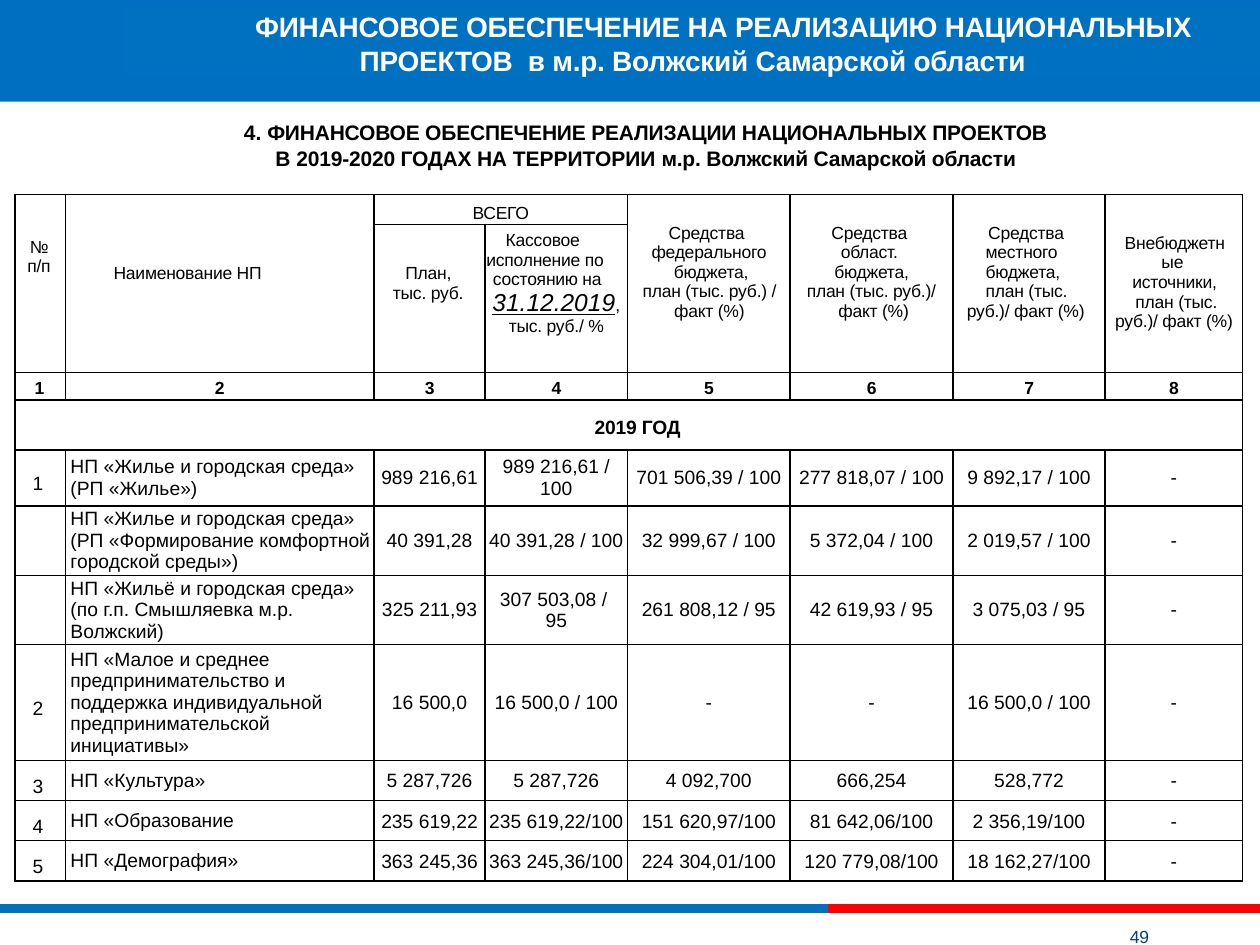
from dataclasses import dataclass
from typing import Optional

from lxml.etree import SubElement as Sub
from pptx import Presentation as Deck
from pptx.dml.color import RGBColor as RGB
from pptx.enum.shapes import MSO_CONNECTOR as Link, MSO_SHAPE as Form
from pptx.enum.text import MSO_ANCHOR as Anchor, PP_ALIGN as Align
from pptx.oxml.ns import qn
from pptx.util import Cm, Pt

HUES = {"blue": "0070C1", "band": "006FC1", "red": "FF0000", "navy": "073D86",
        "white": "FFFFFF", "black": "000000"}
FACE = "Arial"
WIDE, HIGH = 25.4, 19.05


@dataclass
class Run:
    text: str
    size: float = 10
    bold: bool = False
    slant: bool = False
    line: bool = False
    hue: str = "black"
    gap: int = 0


@dataclass
class Par:
    runs: list[Run]
    side: Align = Align.CENTER
    left: float = 0
    first: float = 0
    right: float = 0
    lead: Optional[float] = None
    above: float = 0


@dataclass
class Cell:
    row: int
    col: int
    pars: list[Par]
    top: float = 0
    mid: bool = False
    down: int = 1
    over: int = 1


@dataclass
class Rule:
    start: float
    end: float
    hue: str


def tint(name: str) -> RGB:
    return RGB.from_string(HUES[name])


def fill_text(frame, pars: list[Par]) -> None:
    for i, par in enumerate(pars):
        p = frame.paragraphs[0] if i == 0 else frame.add_paragraph()
        p.alignment = par.side
        if par.lead:
            p.line_spacing = par.lead
        if par.above:
            p.space_before = Pt(par.above)
        props = p._p.get_or_add_pPr()
        for key, size in (("marL", par.left), ("indent", par.first), ("marR", par.right)):
            props.set(key, str(Cm(size)))
        for run in par.runs:
            r = p.add_run()
            r.text = run.text
            font = r.font
            font.name, font.size = FACE, Pt(run.size)
            font.bold, font.italic, font.underline = run.bold, run.slant, run.line
            font.color.rgb = tint(run.hue)
            if run.gap:
                r._r.get_or_add_rPr().set("spc", str(run.gap))


def add_box(slide, left: float, top: float, wide: float, high: float,
            pars: list[Par], anchor=Anchor.TOP, hue: str = "") -> None:
    box = slide.shapes.add_textbox(Cm(left), Cm(top), Cm(wide), Cm(high))
    if hue:
        box.fill.solid()
        box.fill.fore_color.rgb = tint(hue)
    frame = box.text_frame
    frame.word_wrap = True
    frame.vertical_anchor = anchor
    frame.margin_left = frame.margin_right = frame.margin_bottom = 0
    frame.margin_top = Cm(0.03)
    fill_text(frame, pars)


def add_rule(slide, rule: Rule) -> None:
    line = slide.shapes.add_connector(
        Link.STRAIGHT, Cm(rule.start), Cm(18.32), Cm(rule.end), Cm(18.32))
    line.line.color.rgb = tint(rule.hue)
    line.line.width = Pt(5)
    Sub(line._element.spPr, qn("a:effectLst"))


def style_cell(cell) -> None:
    cell.margin_left = cell.margin_right = cell.margin_top = cell.margin_bottom = 0
    props = cell._tc.get_or_add_tcPr()
    for side in ("a:lnL", "a:lnR", "a:lnT", "a:lnB"):
        edge = Sub(props, qn(side), w=str(Pt(1)))
        Sub(Sub(edge, qn("a:solidFill")), qn("a:srgbClr"), val=HUES["black"])
    cell.fill.solid()
    cell.fill.fore_color.rgb = tint("white")


def put_cell(grid, item: Cell) -> None:
    cell = grid.cell(item.row, item.col)
    if item.down * item.over > 1:
        cell.merge(grid.cell(item.row + item.down - 1, item.col + item.over - 1))
    cell.margin_top = Cm(item.top)
    cell.vertical_anchor = Anchor.MIDDLE if item.mid else Anchor.TOP
    fill_text(cell.text_frame, item.pars)


def head(text: str, *rest, **spot) -> Par:
    return Par([Run(text, gap=-10), *rest], **spot)


LEFT, FULL = Align.LEFT, Align.JUSTIFY
HEADS = [
    Cell(0, 0, [head("№", side=LEFT, left=0.3), head("п/п", side=LEFT, left=0.25)], 0.87, down=2),
    Cell(0, 1, [head("Наименование НП", side=LEFT, left=0.97)], 1.39, down=2),
    Cell(0, 2, [head("ВСЕГО")], 0.18, over=2),
    Cell(0, 4, [head("Средства  федерального  бюджета,", left=0.46, right=0.46),
                head("план (тыс. руб.) / факт (%)", left=0.3, right=0.28)], 0.58, down=2),
    Cell(0, 5, [head("Средства  област.  бюджета,", left=0.74, right=0.74),
                head("план (тыс. руб.)/  факт (%)", left=0.33, right=0.25)], 0.58, down=2),
    Cell(0, 6, [head("Средства  местного  бюджета,  план (тыс.", side=FULL,
                     left=0.66, first=0.05, right=0.66),
                head("руб.)/ факт (%)", side=FULL, left=0.28)], 0.58, down=2),
    Cell(0, 7, [head("Внебюджетные  источники,", left=0.33, right=0.3),
                head("план (тыс.", left=0.1), head("руб.)/ факт (%)")], 0.79, down=2),
    Cell(1, 2, [head("План,  тыс. руб.", side=LEFT, left=0.38, first=0.25, right=0.38)], 0.8),
    Cell(1, 3, [head("Кассовое  исполнение по  состоянию на", right=0.46),
                Par([Run("31.12.2019", 14, slant=True, line=True), Run(",")]),
                head("тыс. руб./ %")], 0.13),
    Cell(3, 0, [Par([Run("2019 ГОД", 11, True, gap=-10)], left=0.36)], 0.35, over=8),
]
HOME = "НП «Жилье и городская среда»\n"
ROWS = [
    ("1", HOME + "(РП «Жилье»)", "989 216,61", "989 216,61 / 100",
     "701 506,39 / 100", "277 818,07 / 100", "9 892,17 / 100", "-"),
    ("", HOME + "(РП «Формирование комфортной городской среды»)", "40 391,28",
     "40 391,28 / 100", "32 999,67 / 100", "5 372,04 / 100", "2 019,57 / 100", "-"),
    ("", "НП «Жильё и городская среда»  (по г.п. Смышляевка м.р. Волжский)", "325 211,93",
     "307 503,08 / \n95", "261 808,12 / 95", "42 619,93 / 95", "3 075,03 / 95", "-"),
    ("2", "НП «Малое и среднее предпринимательство и поддержка индивидуальной "
     "предпринимательской инициативы»", "16 500,0", "16 500,0 / 100", "-", "-",
     "16 500,0 / 100", "-"),
    ("3", "НП «Культура»", "5 287,726", "5 287,726", "4 092,700", "666,254", "528,772", "-"),
    ("4", "НП «Образование", "235 619,22", "235 619,22/100", "151 620,97/100",
     "81 642,06/100", "2 356,19/100", "-"),
    ("5", "НП «Демография»", "363 245,36", "363 245,36/100", "224 304,01/100",
     "120 779,08/100", "18 162,27/100", "-"),
]
COLS = [1.02, 6.22, 2.24, 2.87, 3.28, 3.28, 3.07, 2.77]
TALL = [0.6, 2.98, 0.54, 1.01, 1.13, 1.4, 1.4, 2.33, 0.81, 0.81, 0.81]


def body_cell(row: int, col: int, text: str) -> Cell:
    side = LEFT if col < 2 else Align.CENTER
    left = (0.36, 0.1)[col] if col < 2 else 0
    lead = 1.07 if row >= 9 and col > 1 else None
    pars = [Par([Run(part, 11)], side, left, lead=lead) for part in text.split("\n")]
    return Cell(row, col, pars, 0 if col else 0.25, mid=True)


def add_grid(slide) -> None:
    frame = slide.shapes.add_table(len(TALL), len(COLS), Cm(0.3), Cm(3.92),
                                   Cm(sum(COLS)), Cm(sum(TALL)))
    grid = frame.table
    grid.first_row = grid.horz_banding = False
    for col, wide in zip(grid.columns, COLS):
        col.width = Cm(wide)
    for row, high in zip(grid.rows, TALL):
        row.height = Cm(high)
    for cell in grid.iter_cells():
        style_cell(cell)
    for item in HEADS:
        put_cell(grid, item)
    for col in range(len(COLS)):
        par = Par([Run(str(col + 1), bold=True)])
        if col == 0:
            par.side, par.left = LEFT, 0.4
        put_cell(grid, Cell(2, col, [par], 0.13))
    for row, texts in enumerate(ROWS, 4):
        for col, text in enumerate(texts):
            if text:
                put_cell(grid, body_cell(row, col, text))


def main() -> None:
    deck = Deck()
    deck.slide_width, deck.slide_height = Cm(WIDE), Cm(HIGH)
    slide = deck.slides.add_slide(deck.slide_layouts[6])
    for rule in (Rule(0, 16.7, "band"), Rule(16.7, WIDE, "red")):
        add_rule(slide, rule)
    band = slide.shapes.add_shape(Form.RECTANGLE, 0, 0, Cm(WIDE), Cm(2.05))
    band.shadow.inherit = False
    band.fill.solid()
    band.fill.fore_color.rgb = tint("band")
    band.line.fill.background()
    title = ("ФИНАНСОВОЕ ОБЕСПЕЧЕНИЕ НА РЕАЛИЗАЦИЮ НАЦИОНАЛЬНЫХ ПРОЕКТОВ  "
             "в м.р. Волжский Самарской области")
    add_box(slide, 2.54, 0.16, 22.86, 1.4,
            [Par([Run(title, 16, True, hue="white", gap=-10)], first=1.24)],
            Anchor.MIDDLE, "blue")
    add_box(slide, 22.7, 18.46, 0.7, 0.63,
            [Par([Run("49", hue="navy", gap=-10)], LEFT, 0.08)], Anchor.BOTTOM)
    add_box(slide, 4.78, 2.38, 16.48, 1.12, [
        Par([Run("4. ", 12, True),
             Run("ФИНАНСОВОЕ ОБЕСПЕЧЕНИЕ РЕАЛИЗАЦИИ НАЦИОНАЛЬНЫХ ПРОЕКТОВ", 12, True, gap=-10)]),
        Par([Run("В ", 12, True), Run("2019-2020 ГОДАХ НА ", 12, True, gap=-10),
             Run("ТЕРРИТОРИИ ", 12, True),
             Run("м.р. Волжский Самарской области", 12, True, gap=-10)], above=0.6)])
    add_grid(slide)
    deck.save("out.pptx")


if __name__ == "__main__":
    main()
